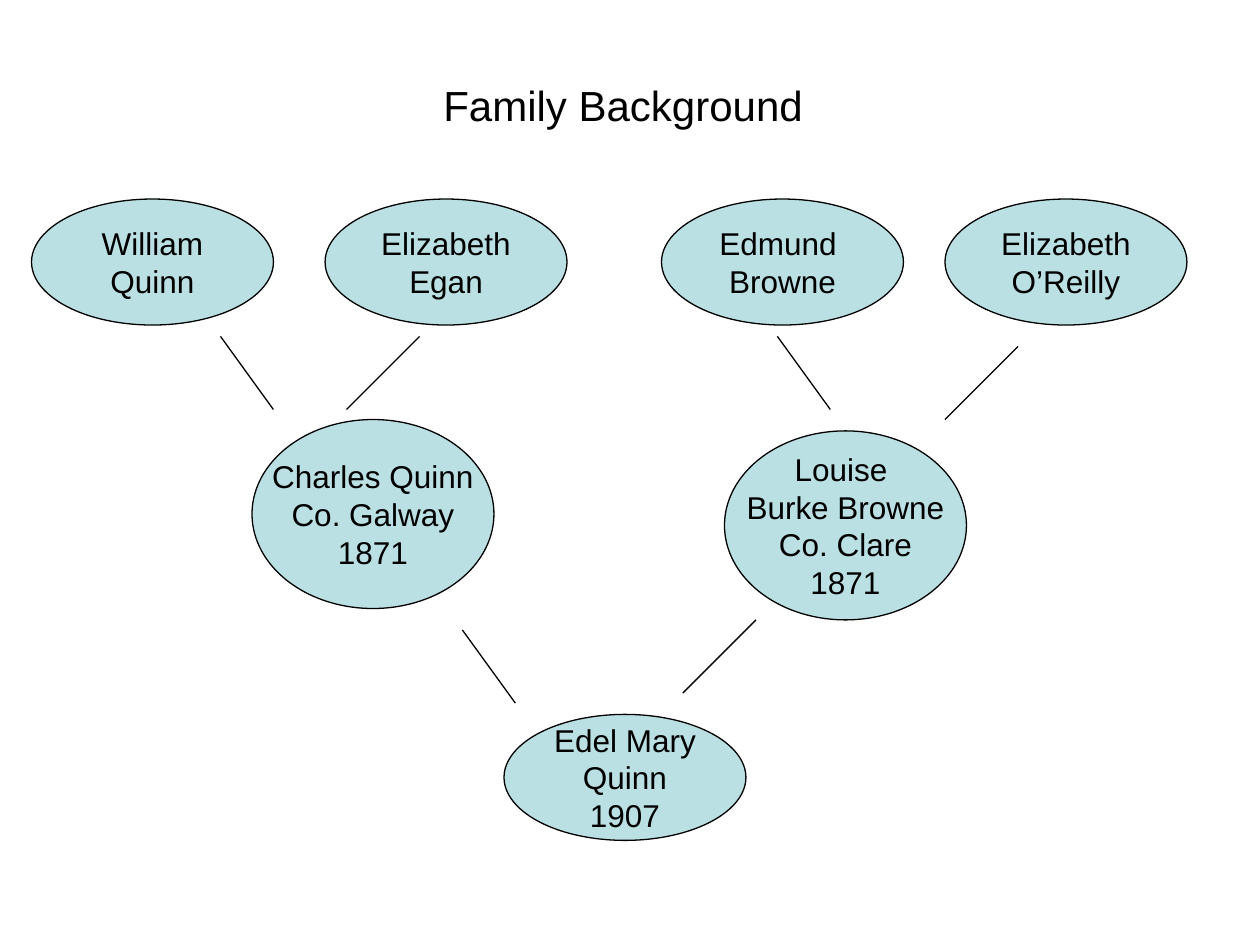
from lxml import etree
from pptx import Presentation, util as u
from pptx.dml.color import RGBColor
from pptx.enum import shapes, text
from pptx.oxml.ns import qn

COLORS = {"oval": "BBE0E3", "ink": "000000"}
FONT = "Arial"
OVAL_WIDTH = 1.92
DROP = 0.58  # height of every descent line
RIGHTWARD, LEFTWARD = 0.42, -0.58  # horizontal run of a descent line

GRANDPARENT_TOP, GRANDPARENT_HEIGHT = 1.58, 1
GRANDPARENTS = [
    (0.25, ["William", "Quinn"]),
    (2.58, ["Elizabeth", "Egan"]),
    (5.25, ["Edmund ", "Browne"]),
    (7.5, ["Elizabeth", "O’Reilly"]),
]
PARENT_HEIGHT = 1.5
PARENTS = [
    (2, 3.33, ["Charles Quinn", "Co. Galway", "1871"]),
    (5.75, 3.42, ["Louise ", "Burke Browne", "Co. Clare", "1871"]),
]
DESCENT_LINES = [
    (1.75, 2.67, RIGHTWARD),
    (3.33, 2.67, LEFTWARD),
    (6.17, 2.67, RIGHTWARD),
    (8.08, 2.75, LEFTWARD),
    (3.67, 5, RIGHTWARD),
    (6, 4.92, LEFTWARD),
]


def color(name):
    return RGBColor.from_string(COLORS[name])


def write_lines(tf, lines, size, align):
    for i, line in enumerate(lines):
        p = tf.add_paragraph() if i else tf.paragraphs[0]
        p.alignment = align
        r = p.add_run()
        r.text = line
        r.font.name = FONT
        r.font.size = u.Pt(size)
        r.font.color.rgb = color("ink")


def add_person(s, left, top, height, lines):
    sp = s.shapes.add_shape(
        shapes.MSO_SHAPE.OVAL,
        u.Inches(left), u.Inches(top), u.Inches(OVAL_WIDTH), u.Inches(height))
    sp.shadow.inherit = False
    sp.fill.solid()
    sp.fill.fore_color.rgb = color("oval")
    sp.line.color.rgb = color("ink")
    sp.line.width = u.Pt(0.75)
    tf = sp.text_frame
    tf.word_wrap = False
    tf.vertical_anchor = text.MSO_ANCHOR.MIDDLE
    write_lines(tf, lines, 18, text.PP_ALIGN.CENTER)


def add_descent_line(s, x, y, run):
    """Draw a line from (x, y) down towards the next generation."""
    line = s.shapes.add_connector(
        shapes.MSO_CONNECTOR.STRAIGHT,
        u.Inches(x), u.Inches(y), u.Inches(x + run), u.Inches(y + DROP))
    line.line.color.rgb = color("ink")
    line.line.width = u.Pt(0.75)
    etree.SubElement(line._element.spPr, qn("a:effectLst"))


def add_title(s, left, top, width, height):
    box = s.shapes.add_textbox(
        u.Inches(left), u.Inches(top), u.Inches(width), u.Inches(height))
    tf = box.text_frame
    tf.word_wrap = False
    tf.auto_size = text.MSO_AUTO_SIZE.SHAPE_TO_FIT_TEXT
    write_lines(tf, ["Family Background"], 24, text.PP_ALIGN.LEFT)


def add_family_tree(s):
    for left, lines in GRANDPARENTS:
        add_person(s, left, GRANDPARENT_TOP, GRANDPARENT_HEIGHT, lines)
    for left, top, lines in PARENTS:
        add_person(s, left, top, PARENT_HEIGHT, lines)
    add_person(s, 4, 5.67, 1, ["Edel Mary", "Quinn", "1907"])
    for x, y, run in DESCENT_LINES:
        add_descent_line(s, x, y, run)


def main():
    prs = Presentation()
    prs.slide_width, prs.slide_height = u.Inches(10), u.Inches(7.5)
    s = prs.slides.add_slide(prs.slide_layouts[6])
    add_family_tree(s)
    add_title(s, 3.42, 0.58, 3.06, 0.5)
    prs.save("out.pptx")


if __name__ == "__main__":
    main()
